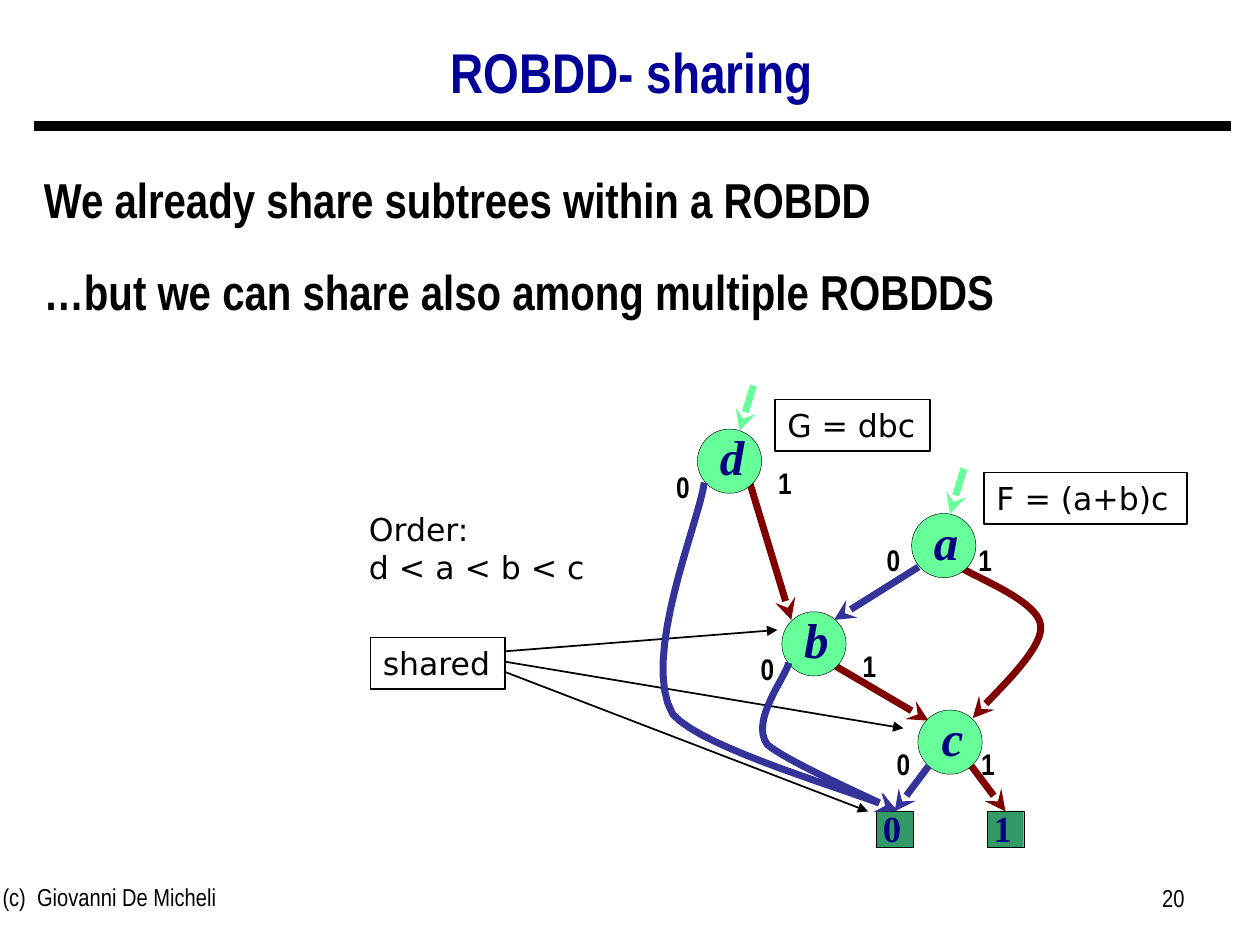
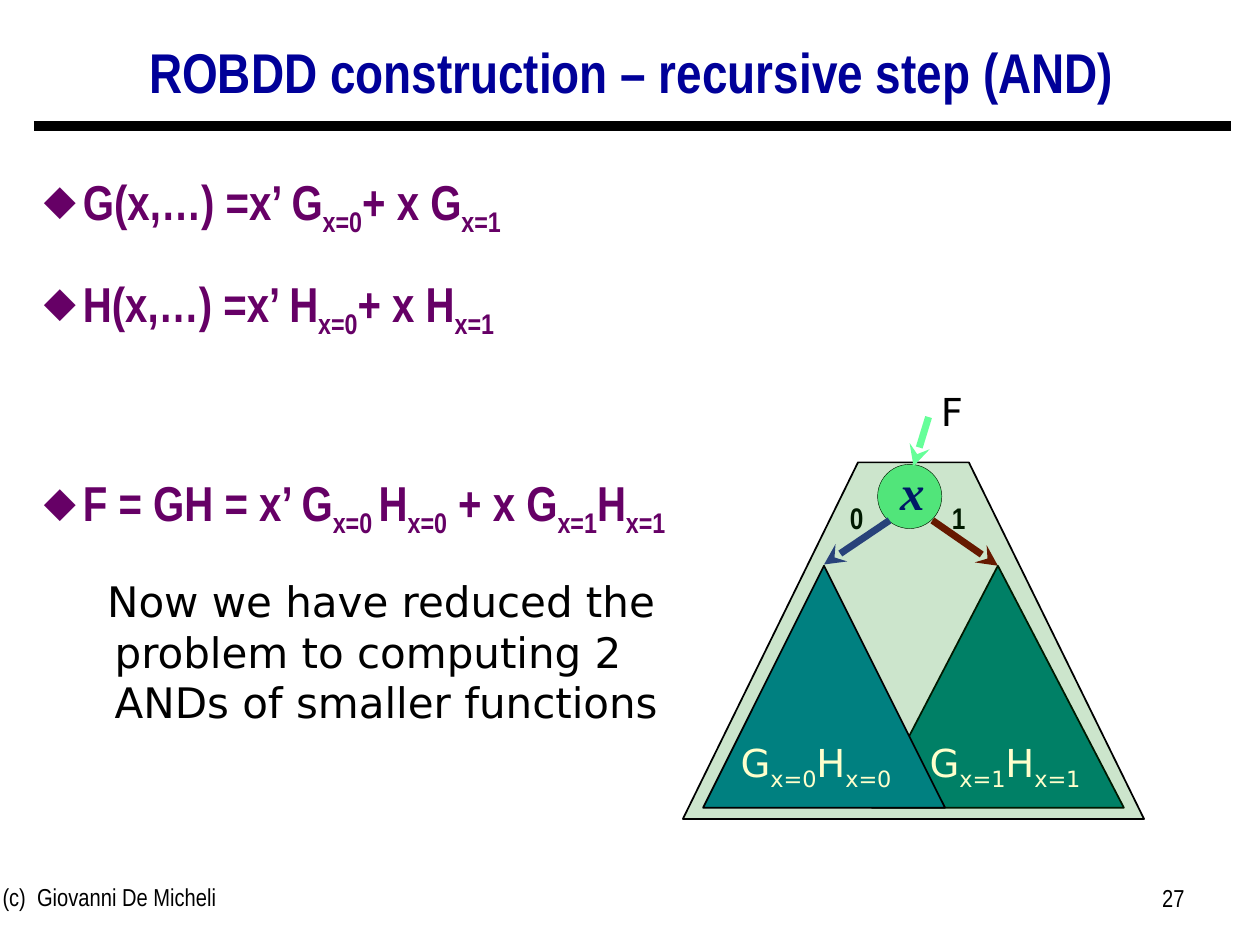
import pptx
import pptx.dml.color
import pptx.enum.shapes
import pptx.enum.text
import pptx.oxml
import pptx.oxml.ns
import pptx.util
from pptx.util import Inches

COLORS = {
    "ink": "000000", "title": "000099", "formula": "660066", "letter": "000080",
    "node": "66FF99", "leaf": "339966", "low": "333399", "high": "800000",
    "cone": "008080", "shade": "008000", "cream": "FFFFCC",
}
NARROW, SANS, SERIF = "Arial Narrow", "DejaVu Sans", "Times New Roman"
SHAPE = pptx.enum.shapes.MSO_SHAPE
ALIGN = pptx.enum.text.PP_ALIGN
ANCHOR = pptx.enum.text.MSO_ANCHOR
NODE_SIZE = 0.51
LEAF_SIZE = 0.29


def rgb(name):
    return pptx.dml.color.RGBColor.from_string(COLORS[name])


def add_xml(parent, tag, **attrs):
    child = pptx.oxml.ns.qn("a:" + tag)
    el = parent.makeelement(child, attrs)
    parent.append(el)
    return el


def write(tf, text, font=SANS, size=18, color="ink", bold=False, italic=False,
          align=ALIGN.LEFT, anchor=ANCHOR.TOP, spacing=None, before=(),
          hang=0, bullet=None, inset=(0.1, 0.05, 0.1, 0.05)):
    """Fill a text frame, one paragraph a line; parts between underscores are subscripts."""
    tf.word_wrap = True
    tf.vertical_anchor = anchor
    tf.margin_left, tf.margin_top, tf.margin_right, tf.margin_bottom = map(Inches, inset)
    for i, line in enumerate(text.split("\n")):
        p = tf.add_paragraph() if i else tf.paragraphs[0]
        p.alignment = align
        if spacing:
            p.line_spacing = spacing
        if before:
            p.space_before = pptx.util.Pt(before[i])
        pPr = p._p.get_or_add_pPr()
        if hang:
            pPr.set("marL", str(Inches(hang)))
            pPr.set("indent", str(-Inches(hang)))
        if bullet:
            add_xml(add_xml(pPr, "buClr"), "srgbClr", val=COLORS[color])
            add_xml(pPr, "buSzPct", val="85000")
            add_xml(pPr, "buChar", char=bullet)
        for j, part in enumerate(line.split("_")):
            if not part:
                continue
            r = p.add_run()
            r.text = part
            r.font.name, r.font.size = font, pptx.util.Pt(size)
            r.font.bold, r.font.italic = bold, italic
            r.font.color.rgb = rgb(color)
            if j % 2:
                r._r.get_or_add_rPr().set("baseline", "-25000")


def bezier(points, steps=16):
    """Sample a chain of cubic curves given as start, control, control, end, ..."""
    out = [points[0]]
    for i in range(0, len(points) - 1, 3):
        a, b, c, d = points[i:i + 4]
        for n in range(1, steps + 1):
            t = n / steps
            u = 1 - t
            out.append(tuple(u**3 * a[k] + 3 * u * u * t * b[k] + 3 * u * t * t * c[k]
                             + t**3 * d[k] for k in (0, 1)))
    return out


class Deck:
    """Holds the presentation, its style and the current slide."""

    def __init__(self):
        self.prs = pptx.Presentation()
        self.prs.slide_width, self.prs.slide_height = Inches(10), Inches(7.5)
        self.shapes = None

    def slide(self, title, number):
        s = self.prs.slides.add_slide(self.prs.slide_layouts[5])
        self.shapes = s.shapes
        sp = s.shapes.title
        sp.left, sp.top, sp.width, sp.height = map(Inches, (0.26, 0.22, 9.51, 0.75))
        write(sp.text_frame, title, font=NARROW, size=32, color="title", bold=True,
              align=ALIGN.CENTER, anchor=ANCHOR.MIDDLE, spacing=0.9)
        self.line((0.27, 1), (9.77, 1), "ink", 6)
        self.text("(c)\u00a0 Giovanni De Micheli".replace("\u00a0", " "), 0, 6.95, 3.09, 0.52,
                  font=NARROW, size=14, inset=(0.02, 0.05, 0.1, 0.05))
        self.text(number, 7.17, 6.96, 2.33, 0.52, font=NARROW, size=14, align=ALIGN.RIGHT)

    def text(self, text, left, top, width, height, **fmt):
        sp = self.shapes.add_textbox(*map(Inches, (left, top, width, height)))
        write(sp.text_frame, text, **fmt)

    def body(self, text, **fmt):
        self.text(text, 0.25, 1.18, 9.51, 5.69, font=NARROW, size=28, bold=True,
                  spacing=1.25, **fmt)

    def label(self, text, x, y, font=NARROW, size=17, **fmt):
        self.text(text, x - 0.25, y - 0.25, 0.5, 0.5, font=font, size=size, bold=True,
                  align=ALIGN.CENTER, anchor=ANCHOR.MIDDLE, inset=(0, 0, 0, 0), **fmt)

    def branch_labels(self, y_low, x_low, y_high, x_high):
        self.label("0", x_low, y_low)
        self.label("1", x_high, y_high)

    def paint(self, sp, fill, line, width):
        sp.shadow.inherit = False
        if fill:
            sp.fill.solid()
            sp.fill.fore_color.rgb = rgb(fill)
        else:
            sp.fill.background()
        sp.line.color.rgb = rgb(line)
        sp.line.width = pptx.util.Pt(width)
        return sp

    def shape(self, kind, left, top, width, height, fill=None, line_width=1.0):
        sp = self.shapes.add_shape(kind, *map(Inches, (left, top, width, height)))
        return self.paint(sp, fill, "ink", line_width)

    def box(self, text, left, top, width):
        sp = self.shape(SHAPE.RECTANGLE, left, top, width, 0.41)
        write(sp.text_frame, text, anchor=ANCHOR.MIDDLE, inset=(0.1, 0.05, 0, 0.05))

    def node(self, letter, x, y):
        half = NODE_SIZE / 2
        self.shape(SHAPE.OVAL, x - half, y - half, NODE_SIZE, NODE_SIZE, "node", 0.25)
        self.label(letter, x + 0.02, y - 0.04, SERIF, 28, color="letter", italic=True)

    def leaf(self, digit, x, y):
        half = LEAF_SIZE / 2
        self.shape(SHAPE.RECTANGLE, x - half, y - half, LEAF_SIZE, LEAF_SIZE, "leaf", 0.25)
        self.label(digit, x - 0.02, y - 0.01, SERIF, 21, color="letter")

    def line(self, start, end, color="ink", width=1.0, head=None):
        ends = map(Inches, (*start, *end))
        sp = self.shapes.add_connector(pptx.enum.shapes.MSO_CONNECTOR.STRAIGHT, *ends)
        sp.line.color.rgb = rgb(color)
        sp.line.width = pptx.util.Pt(width)
        if head:
            add_xml(sp.line._get_or_add_ln(), "tailEnd", type=head)
        add_xml(sp._element.spPr, "effectLst")

    def edge(self, start, end, color):
        self.line(start, end, color, 4, "stealth")

    def outline(self, points, close):
        emu = [tuple(map(Inches, pt)) for pt in points]
        fb = self.shapes.build_freeform(*emu[0])
        fb.add_line_segments(emu[1:], close=close)
        return fb.convert_to_shape()

    def curve(self, points, color):
        sp = self.paint(self.outline(bezier(points), False), None, color, 4)
        add_xml(sp.line._get_or_add_ln(), "tailEnd", type="stealth")

    def polygon(self, points, fill, opacity):
        sp = self.paint(self.outline(points, True), fill, "ink", 1)
        clr = sp._element.spPr.find(pptx.oxml.ns.qn("a:solidFill"))[0]
        add_xml(clr, "alpha", val=str(opacity * 1000))


def sharing_slide(deck):
    deck.slide("ROBDD- sharing", "20")
    deck.body("We already share subtrees within a ROBDD\n"
              "…but we can share also among multiple ROBDDS", before=(10.5, 10.5))

    deck.box("shared", 2.94, 5.06, 1.07)
    for start, end in (((4, 5.33), (6.89, 6.44)), ((4, 5.25), (7.17, 5.78)),
                       ((4, 5.17), (6.17, 5))):
        deck.line(start, end, head="triangle")

    deck.edge((7.29, 4.5), (6.62, 4.92), "low")
    deck.curve([(7.62, 4.5), (7.73, 4.58), (8.25, 4.77), (8.26, 4.97),
                (8.28, 5.17), (7.84, 5.55), (7.72, 5.7)], "high")
    deck.edge((6.62, 5.28), (7.37, 5.72), "high")
    deck.edge((5.95, 3.83), (6.28, 4.92), "high")

    for letter, x, y in (("a", 7.49, 4.33), ("b", 6.46, 5.11),
                         ("c", 7.54, 5.89), ("d", 5.79, 3.66)):
        deck.node(letter, x, y)
    for digit, x in (("0", 7.1), ("1", 7.98)):
        deck.leaf(digit, x, 6.58)

    deck.edge((7.71, 6.08), (7.98, 6.44), "high")
    deck.edge((7.37, 6.08), (7.1, 6.44), "low")
    deck.curve([(6.26, 5.26), (6.24, 5.37), (5.95, 5.72), (6.09, 5.91),
                (6.24, 6.04), (6.9, 6.33), (7.12, 6.44)], "low")
    deck.curve([(5.59, 3.83), (5.55, 4.14), (5.08, 5.23), (5.34, 5.67),
                (5.59, 5.95), (6.75, 6.27), (7.12, 6.43)], "low")
    deck.edge((7.65, 3.72), (7.54, 4.08), "node")
    deck.edge((5.98, 3.06), (5.87, 3.42), "node")

    for y_low, x_low, y_high, x_high in ((4.44, 7.09, 4.44, 7.82), (5.31, 6.09, 5.28, 6.9),
                                         (6.06, 7.17, 6.06, 7.84), (3.86, 5.42, 3.83, 6.23)):
        deck.branch_labels(y_low, x_low, y_high, x_high)

    deck.text("Order:\nd < a < b < c", 2.83, 4, 2.02, 0.7)
    deck.box("G = dbc", 6.15, 3.17, 1.23)
    deck.box("F = (a+b)c", 7.81, 3.75, 1.61)


def construction_slide(deck):
    deck.slide("ROBDD construction – recursive step (AND)", "27")
    deck.body("G(x,…) =x’ G_x=0_+ x G_x=1\n"
              "H(x,…) =x’ H_x=0_+ x H_x=1\n"
              "F = GH = x’ G_x=0 _H_x=0_ + x G_x=1_H_x=1",
              color="formula", hang=0.31, bullet="◆", before=(10.5, 10.5, 66))

    deck.node("x", 7.22, 3.94)
    deck.edge((7.4, 4.13), (7.92, 4.49), "high")
    deck.edge((7.06, 4.13), (6.54, 4.48), "low")
    deck.branch_labels(4.11, 6.8, 4.11, 7.61)
    deck.shape(SHAPE.ISOSCELES_TRIANGLE, 6.92, 4.49, 2, 1.92, "cone")
    deck.polygon([(5.42, 6.5), (6.81, 3.67), (7.69, 3.67), (9.08, 6.5)], "shade", 20)
    deck.edge((7.37, 3.31), (7.25, 3.7), "node")
    deck.text("F", 7.37, 3.03, 0.47, 0.47, size=22)
    deck.shape(SHAPE.ISOSCELES_TRIANGLE, 5.58, 4.49, 1.92, 1.92, "cone")
    for value, left in ((0, 5.78), (1, 7.28)):
        deck.text(f"G_x={value}_H_x={value}", left, 5.82, 1.61, 0.47, size=22, color="cream")

    deck.text("Now we have reduced the problem to computing 2 ANDs of smaller functions",
              0.85, 4.52, 4.61, 1.3, size=24, hang=0.06, inset=(0, 0.05, 0.1, 0.05))


def main():
    deck = Deck()
    sharing_slide(deck)
    construction_slide(deck)
    deck.prs.save("out.pptx")


if __name__ == "__main__":
    main()
